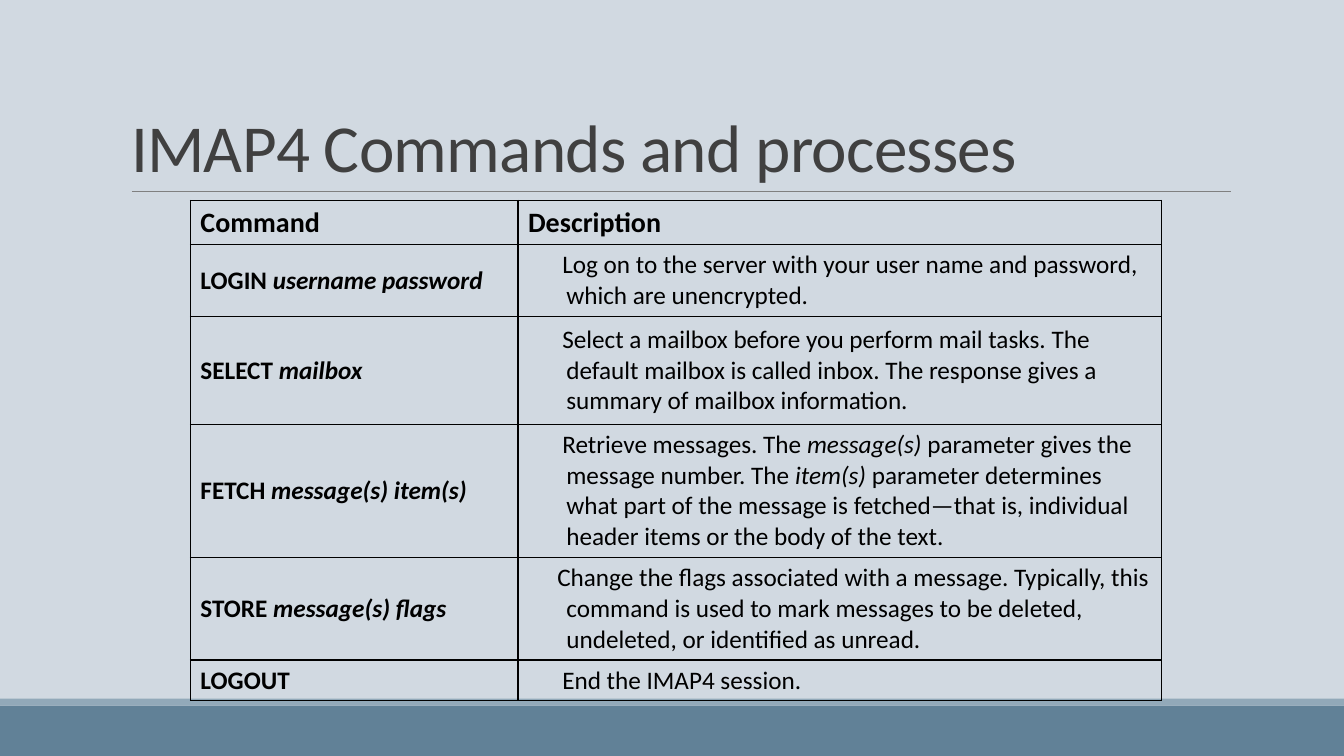
from dataclasses import dataclass

from lxml import etree
from pptx import Presentation
from pptx.dml.color import RGBColor as Rgb
from pptx.enum import shapes as es, text as et
from pptx.oxml.ns import qn
from pptx.util import Pt


@dataclass(frozen=True)
class Theme:
    font: str = "Calibri"
    back: str = "D1D9E1"
    band: str = "618197"
    strip: str = "92A9B9"
    rule: str = "808080"
    title: str = "404040"
    ink: str = "000000"
    title_size: int = 48
    head_size: int = 20
    body_size: int = 18


THEME = Theme()
COLS = (234, 459.4)
HANG = 27.36  # left margin of the descriptions

# Row height, command, description, first-line indent; *...* marks italics
ROWS = (
    (31.6, "Command", "Description", None),
    (51.2, "LOGIN *username password*",
     "Log on to the server with your user name and password, "
     "which are unencrypted.", -2.9),
    (77, "SELECT *mailbox*",
     "Select a mailbox before you perform mail tasks. The default mailbox "
     "is called inbox. The response gives a summary of mailbox information.",
     -2.9),
    (95.2, "FETCH *message(s) item(s)*",
     "Retrieve messages. The *message(s)* parameter gives the message number. "
     "The *item(s)* parameter determines what part of the message is "
     "fetched—that is, individual header items or the body of the text.",
     -2.9),
    (73, "STORE *message(s) flags*",
     "Change the flags associated with a message. Typically, this command is "
     "used to mark messages to be deleted, undeleted, or identified as unread.",
     -6.5),
    (29.2, "LOGOUT", "End the IMAP4 session.", -2.9),
)


def style(font, size, color, bold=False):
    font.name = THEME.font
    font.size = Pt(size)
    font.bold = bold
    font.color.rgb = Rgb.from_string(color)


def add_bar(slide, top, height, color):
    bar = slide.shapes.add_shape(
        es.MSO_SHAPE.RECTANGLE, 0, Pt(top), Pt(960), Pt(height))
    bar.shadow.inherit = False
    bar.fill.solid()
    bar.fill.fore_color.rgb = Rgb.from_string(color)
    bar.line.fill.background()


def add_rule(slide, left, right, top):
    rule = slide.shapes.add_connector(
        es.MSO_CONNECTOR.STRAIGHT, Pt(left), Pt(top), Pt(right), Pt(top))
    rule.line.color.rgb = Rgb.from_string(THEME.rule)
    rule.line.width = Pt(0.5)
    etree.SubElement(rule._element.spPr, qn("a:effectLst"))


def set_title(slide, words):
    title = slide.shapes.title
    title.left, title.top = Pt(86.4), Pt(22.5)
    title.width, title.height = Pt(792), Pt(114.2)
    frame = title.text_frame
    frame.auto_size = et.MSO_AUTO_SIZE.NONE
    frame.vertical_anchor = et.MSO_ANCHOR.BOTTOM
    frame.text = words
    para = frame.paragraphs[0]
    para.alignment = et.PP_ALIGN.LEFT
    para.line_spacing = 0.85
    style(para.font, THEME.title_size, THEME.title)
    para.runs[0].font._element.set("spc", "-50")


def add_borders(cell):
    props = cell._tc.get_or_add_tcPr()
    for place, side in enumerate(("lnL", "lnR", "lnT", "lnB")):
        line = etree.Element(qn("a:" + side), w=str(Pt(1)))
        fill = etree.SubElement(line, qn("a:solidFill"))
        etree.SubElement(fill, qn("a:srgbClr"), val=THEME.ink)
        props.insert(place, line)


def fill_cell(cell, words, size, bold, indent=None):
    cell.fill.background()
    add_borders(cell)
    cell.vertical_anchor = et.MSO_ANCHOR.MIDDLE
    para = cell.text_frame.paragraphs[0]
    style(para.font, size, THEME.ink, bold)
    for index, part in enumerate(words.split("*")):
        if part:
            run = para.add_run()
            run.text = part
            if index % 2:
                run.font.italic = True
    if indent is not None:
        props = para._p.get_or_add_pPr()
        props.set("marL", str(Pt(HANG)))
        props.set("indent", str(Pt(indent)))


def add_grid(slide, left, top):
    height = sum(row[0] for row in ROWS)
    grid = slide.shapes.add_table(
        len(ROWS), len(COLS), Pt(left), Pt(top), Pt(sum(COLS)), Pt(height)).table
    grid.first_row = grid.horz_banding = False
    for col, width in zip(grid.columns, COLS):
        col.width = Pt(width)
    for index, (tall, command, about, indent) in enumerate(ROWS):
        head = index == 0
        size = THEME.head_size if head else THEME.body_size
        grid.rows[index].height = Pt(tall)
        fill_cell(grid.cell(index, 0), command, size, True)
        fill_cell(grid.cell(index, 1), about, size, head, indent)


def main():
    deck = Presentation()
    deck.slide_width, deck.slide_height = Pt(960), Pt(540)
    slide = deck.slides.add_slide(deck.slide_layouts[5])

    # Backdrop
    slide.background.fill.solid()
    slide.background.fill.fore_color.rgb = Rgb.from_string(THEME.back)
    add_bar(slide, 504, 36, THEME.band)
    add_bar(slide, 499, 5, THEME.strip)

    # Heading
    set_title(slide, "IMAP4 Commands and processes")
    add_rule(slide, 94.3, 879, 136.8)

    # Command table
    add_grid(slide, 136, 143.2)
    deck.save("out.pptx")


if __name__ == "__main__":
    main()
